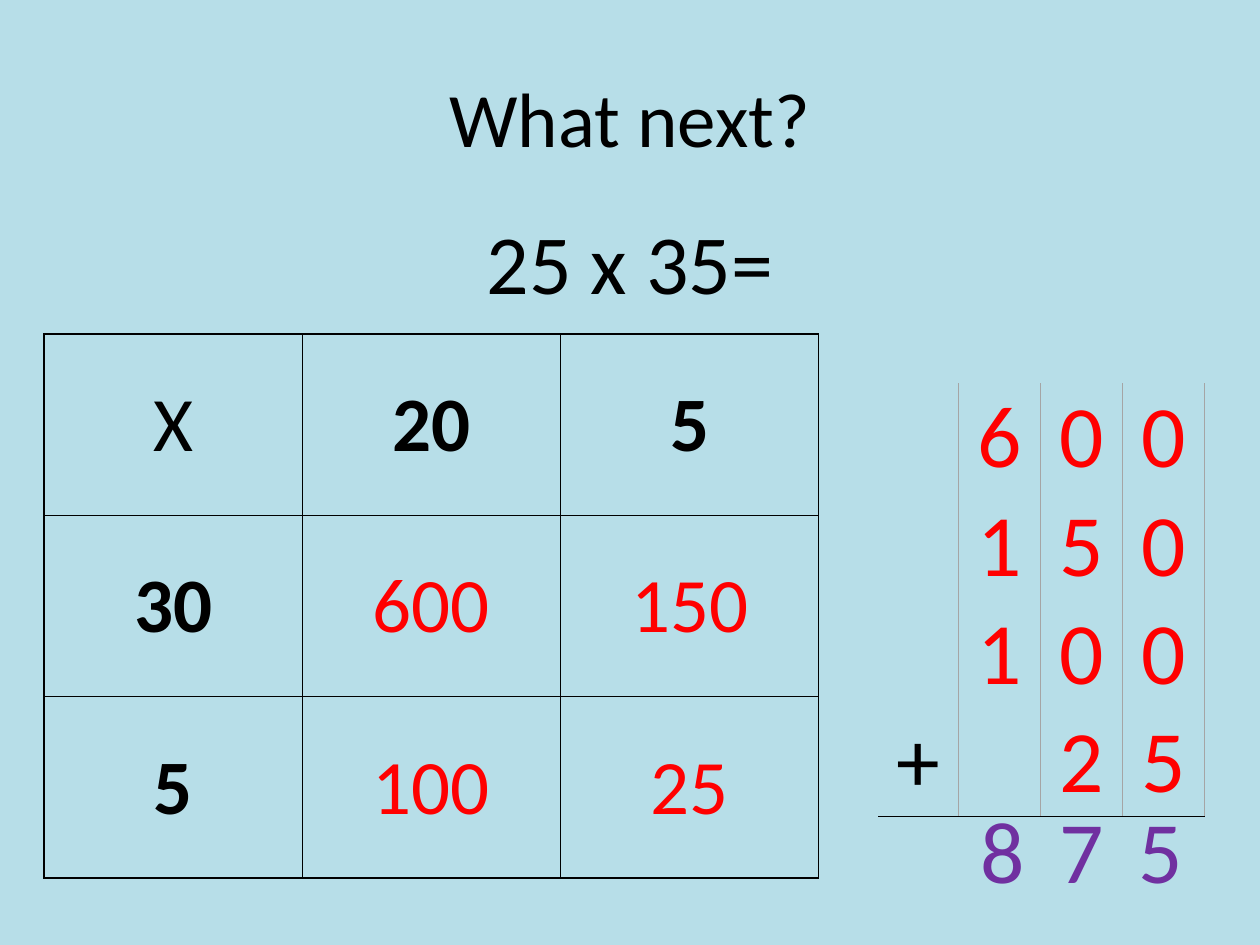
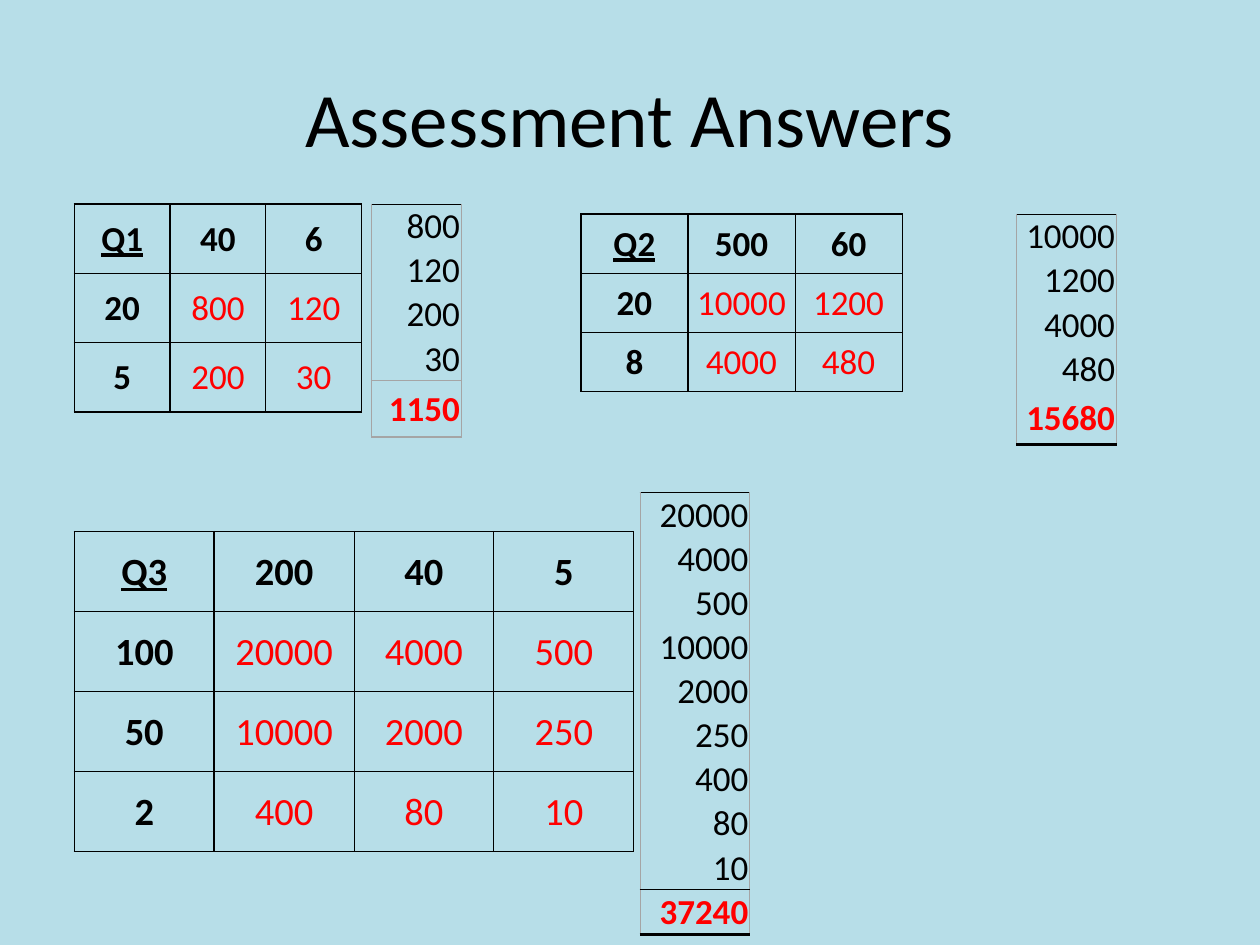
from lxml import etree
from pptx import Presentation
from pptx.dml.color import RGBColor
from pptx.enum import text
from pptx.oxml.ns import qn
from pptx.util import Inches, Pt

BLACK = RGBColor(0x00, 0x00, 0x00)
RED = RGBColor(0xFF, 0x00, 0x00)
PURPLE = RGBColor(0x70, 0x30, 0xA0)
PALE_BLUE = RGBColor(0xB7, 0xDE, 0xE8)
GREY = RGBColor(0xA5, 0xA5, 0xA5)
FONT = "Calibri"
CENTER, RIGHT = text.PP_ALIGN.CENTER, text.PP_ALIGN.RIGHT
MIDDLE, TOP = text.MSO_ANCHOR.MIDDLE, text.MSO_ANCHOR.TOP

# Content: each grid multiplies its column heads by its row heads
WORKED_TITLE = "What next?"
WORKED_SUM = "25 x 35="
WORKED_GRID = dict(corner="X", across=[20, 5], down=[30, 5], at=(0.35, 2.65),
                   cell=(2.05, 1.44), size=44, corner_format={})
COLUMN_ADDITION = [" 600", " 150", " 100", "+ 25", ""]
ADDITION_AT = (6.97, 3.04)
ADDITION_COLS = [0.64, 0.65, 0.65, 0.65]
ADDITION_ROWS = [0.86] * 4 + [0.78]
ANSWER_DIGITS = "875"
ANSWER_AT, ANSWER_STEP = (7.68, 6.27), 0.63

ANSWERS_TITLE = "Assessment Answers"
QUESTION_CORNER = {"bold": True, "underline": True}
# Sum rules: (colour, points) above and below the total
QUESTIONS = [
    dict(corner="Q1", across=[40, 6], down=[20, 5], at=(0.59, 1.62), cell=(0.76, 0.55),
         size=20, sum_at=(2.95, 1.62), sum_width=0.71, total_height=0.45,
         total_rules=((GREY, 1), (GREY, 1))),
    dict(corner="Q2", across=[500, 60], down=[20, 8], at=(4.61, 1.7), cell=(0.85, 0.47),
         size=20, sum_at=(8.07, 1.7), sum_width=0.79, total_height=0.43,
         total_rules=(None, (BLACK, 2))),
    dict(corner="Q3", across=[200, 40, 5], down=[100, 50, 2], at=(0.59, 4.22),
         cell=(1.11, 0.635), size=22, sum_at=(5.08, 3.91), sum_width=0.87,
         total_height=0.36, total_rules=((BLACK, 0.5), (BLACK, 2))),
]
SUM_SIZE, SUM_ROW = 20, 0.35


def put_text(frame, words, align=CENTER, color=BLACK, **font_format):
    paragraph = frame.paragraphs[0]
    paragraph.alignment = align
    if not words:
        return
    run = paragraph.add_run()
    run.text = words
    run.font.color.rgb = color
    for key, value in {"name": FONT, **font_format}.items():
        setattr(run.font, key, value)


def add_text(slide, at, words, size, anchor=TOP, color=BLACK):
    frame = slide.shapes.add_textbox(*map(Inches, at)).text_frame
    frame.word_wrap = True
    frame.vertical_anchor = anchor
    put_text(frame, words, color=color, size=Pt(size))


def add_titled_slide(deck, title):
    slide = deck.slides.add_slide(deck.slide_layouts[6])
    slide.background.fill.solid()
    slide.background.fill.fore_color.rgb = PALE_BLUE
    add_text(slide, (0.5, 0.3, 9, 1.25), title, 44, MIDDLE)
    return slide


def set_border(cell, side, rule):
    line = etree.SubElement(cell._tc.get_or_add_tcPr(), qn("a:ln" + side))
    if rule is None:
        line.set("w", "0")
        etree.SubElement(line, qn("a:noFill"))
        return
    color, points = rule
    line.set("w", str(Pt(points)))
    fill = etree.SubElement(line, qn("a:solidFill"))
    etree.SubElement(fill, qn("a:srgbClr"), val=str(color))


def add_table(slide, at, widths, heights, cell_text, upright, level):
    """cell_text(r, c) gives words and format; upright(r, edge) and level(edge) give rules."""
    size = sum(widths), sum(heights)
    table = slide.shapes.add_table(len(heights), len(widths),
                                   *map(Inches, at + size)).table
    table.first_row = table.horz_banding = False
    for column, width in zip(table.columns, widths):
        column.width = Inches(width)
    for r, height in enumerate(heights):
        table.rows[r].height = Inches(height)
        for c in range(len(widths)):
            cell = table.cell(r, c)
            cell_format = dict(margin_left=Inches(0.01), margin_right=Inches(0.01),
                               margin_top=Inches(0.01), margin_bottom=0,
                               vertical_anchor=MIDDLE)
            for key, value in cell_format.items():
                setattr(cell, key, value)
            words, font_format = cell_text(r, c)
            put_text(cell.text_frame, words, **font_format)
            for side, rule in (("L", upright(r, c)), ("R", upright(r, c + 1)),
                               ("T", level(r)), ("B", level(r + 1))):
                set_border(cell, side, rule)
            cell.fill.background()


def add_grid(slide, grid):
    across, down, size = grid["across"], grid["down"], Pt(grid["size"])
    width, height = grid["cell"]

    def cell_text(r, c):
        if r and c:
            return str(down[r - 1] * across[c - 1]), dict(size=size, color=RED)
        if r or c:
            head = down[r - 1] if r else across[c - 1]
            return str(head), dict(size=size, bold=True)
        return grid["corner"], dict(size=size, **grid.get("corner_format", QUESTION_CORNER))

    def upright(r, edge):
        return BLACK, 1 if edge in (0, 1, 4) else 0.5

    def level(edge):
        return BLACK, 1 if edge in (0, 1, len(down) + 1) else 0.5

    add_table(slide, grid["at"], [width] * (len(across) + 1),
              [height] * (len(down) + 1), cell_text, upright, level)


def add_sum(slide, question):
    parts = [d * a for d in question["down"] for a in question["across"]]
    above, below = question["total_rules"]
    rules = {0: (BLACK, 0.5), len(parts): above, len(parts) + 1: below}

    def cell_text(r, c):
        look = dict(size=Pt(SUM_SIZE), align=RIGHT)
        if r < len(parts):
            return str(parts[r]), look
        return str(sum(parts)), dict(look, color=RED, bold=True)

    add_table(slide, question["sum_at"], [question["sum_width"]],
              [SUM_ROW] * len(parts) + [question["total_height"]],
              cell_text, lambda r, edge: (GREY, 0.5), rules.get)


def add_column_addition(slide):
    last = len(COLUMN_ADDITION) - 1

    def cell_text(r, c):
        digit = COLUMN_ADDITION[r][c:c + 1].strip()
        return digit, dict(size=Pt(50), color=BLACK if digit == "+" else RED)

    def upright(r, edge):
        return (GREY, 0.5) if edge and r < last else None

    add_table(slide, ADDITION_AT, ADDITION_COLS, ADDITION_ROWS, cell_text, upright,
              {last: (BLACK, 1)}.get)


def main():
    deck = Presentation()
    deck.slide_width, deck.slide_height = Inches(10), Inches(7.5)

    # Worked example
    worked = add_titled_slide(deck, WORKED_TITLE)
    add_text(worked, (0.5, 1.62, 9, 1), WORKED_SUM, 48)
    add_grid(worked, WORKED_GRID)
    add_column_addition(worked)
    left, top = ANSWER_AT
    for i, digit in enumerate(ANSWER_DIGITS):
        add_text(worked, (left + i * ANSWER_STEP, top, 0.55, 0.94), digit, 50, color=PURPLE)

    # Answers
    answers = add_titled_slide(deck, ANSWERS_TITLE)
    for question in QUESTIONS:
        add_grid(answers, question)
        add_sum(answers, question)

    deck.save("out.pptx")


if __name__ == "__main__":
    main()
